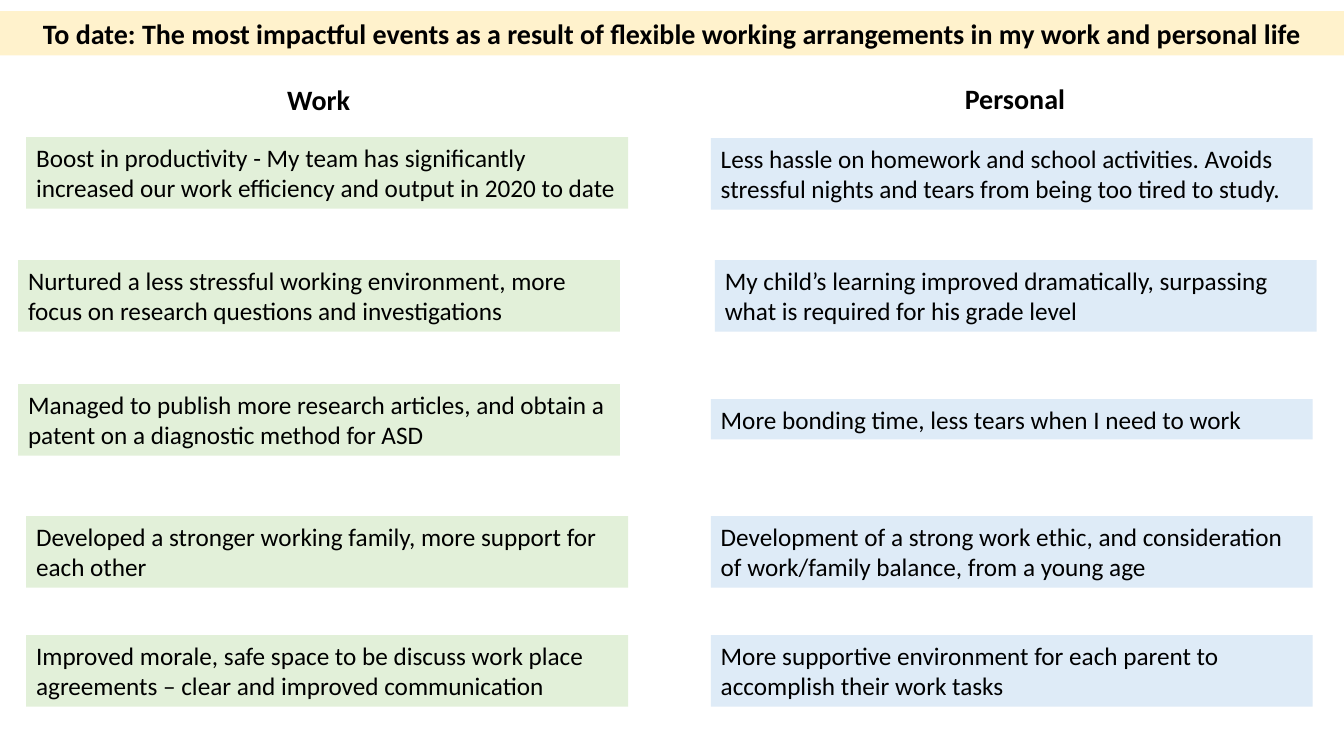
from dataclasses import dataclass

from pptx import Presentation
from pptx.dml.color import RGBColor
from pptx.enum.shapes import MSO_SHAPE as Shape
from pptx.enum.text import MSO_ANCHOR as Anchor, MSO_AUTO_SIZE as AutoSize, PP_ALIGN as Align
from pptx.util import Emu, Pt

EMU_PER_PX = 9144  # 100 px to the inch


def px(length):
    return Emu(length * EMU_PER_PX)


@dataclass(frozen=True)
class Theme:
    font: str = "Calibri"
    text: str = "000000"
    banner: str = "FFF2CC"
    work: str = "E2F0D9"
    personal: str = "DEEBF7"
    heading_size: int = 20
    body_size: int = 18


THEME = Theme()


def write_text(frame, text, size=THEME.body_size, bold=False, align=Align.LEFT,
               anchor=Anchor.TOP, wrap=True, fit=AutoSize.SHAPE_TO_FIT_TEXT):
    frame.word_wrap = wrap
    frame.auto_size = fit
    frame.vertical_anchor = anchor
    paragraph = frame.paragraphs[0]
    paragraph.alignment = align
    run = paragraph.add_run()
    run.text = text
    run.font.name = THEME.font
    run.font.size = Pt(size)
    run.font.bold = bold
    run.font.color.rgb = RGBColor.from_string(THEME.text)


class SlideBuilder:
    def __init__(self, slide, theme):
        self.slide = slide
        self.theme = theme

    def fill(self, shape, color):
        shape.fill.solid()
        shape.fill.fore_color.rgb = RGBColor.from_string(color)

    def title(self, text, left, top, width, height):
        title = self.slide.shapes.title
        title.left, title.top, title.width, title.height = map(px, (left, top, width, height))
        self.fill(title, self.theme.banner)
        write_text(title.text_frame, text, size=self.theme.heading_size, bold=True,
                   align=Align.CENTER, fit=AutoSize.NONE)

    def heading(self, text, left, top, width, height):
        box = self.slide.shapes.add_textbox(*map(px, (left, top, width, height)))
        write_text(box.text_frame, text, size=self.theme.heading_size, bold=True, wrap=False)

    def card(self, text, left, top, width, height, color):
        card = self.slide.shapes.add_shape(Shape.RECTANGLE, *map(px, (left, top, width, height)))
        card.shadow.inherit = False
        card.line.fill.background()
        self.fill(card, color)
        write_text(card.text_frame, text)


# Card contents: text, left, top, height
CARD_WIDTH = 597
ONE_LINE, TWO_LINES = 40, 71
WORK_CARDS = [
    ("Boost in productivity - My team has significantly increased our work efficiency "
     "and output in 2020 to date", 26, 136, TWO_LINES),
    ("Nurtured a less stressful working environment, more focus on research questions "
     "and investigations", 18, 258, TWO_LINES),
    ("Managed to publish more research articles, and obtain a patent on a diagnostic "
     "method for ASD", 18, 381, TWO_LINES),
    ("Developed a stronger working family, more support for each other", 26, 512, TWO_LINES),
    ("Improved morale, safe space to be discuss work place agreements – clear and "
     "improved communication", 26, 630, TWO_LINES),
]
PERSONAL_CARDS = [
    ("Less hassle on homework and school activities. Avoids stressful nights and tears "
     "from being too tired to study.", 705, 137, TWO_LINES),
    ("My child’s learning improved dramatically, surpassing what is required for his "
     "grade level", 709, 258, TWO_LINES),
    ("More bonding time, less tears when I need to work", 705, 396, ONE_LINE),
    ("Development of a strong work ethic, and consideration of work/family balance, "
     "from a young age", 705, 512, TWO_LINES),
    ("More supportive environment for each parent to accomplish their work tasks",
     705, 630, TWO_LINES),
]


def main():
    presentation = Presentation()
    presentation.slide_width, presentation.slide_height = px(1333), px(750)
    title_only = presentation.slide_layouts.get_by_name("Title Only")
    builder = SlideBuilder(presentation.slides.add_slide(title_only), THEME)

    # Banner and column headings
    builder.title("To date: The most impactful events as a result of flexible working "
                  "arrangements in my work and personal life", 0, 11, 1333, 44)
    builder.heading("Work", 275, 77, 83, 44)
    builder.heading("Personal", 947, 76, 121, 44)

    # Cards of both columns
    for cards, color in ((WORK_CARDS, THEME.work), (PERSONAL_CARDS, THEME.personal)):
        for text, left, top, height in cards:
            builder.card(text, left, top, CARD_WIDTH, height, color)

    presentation.save("out.pptx")


if __name__ == "__main__":
    main()
